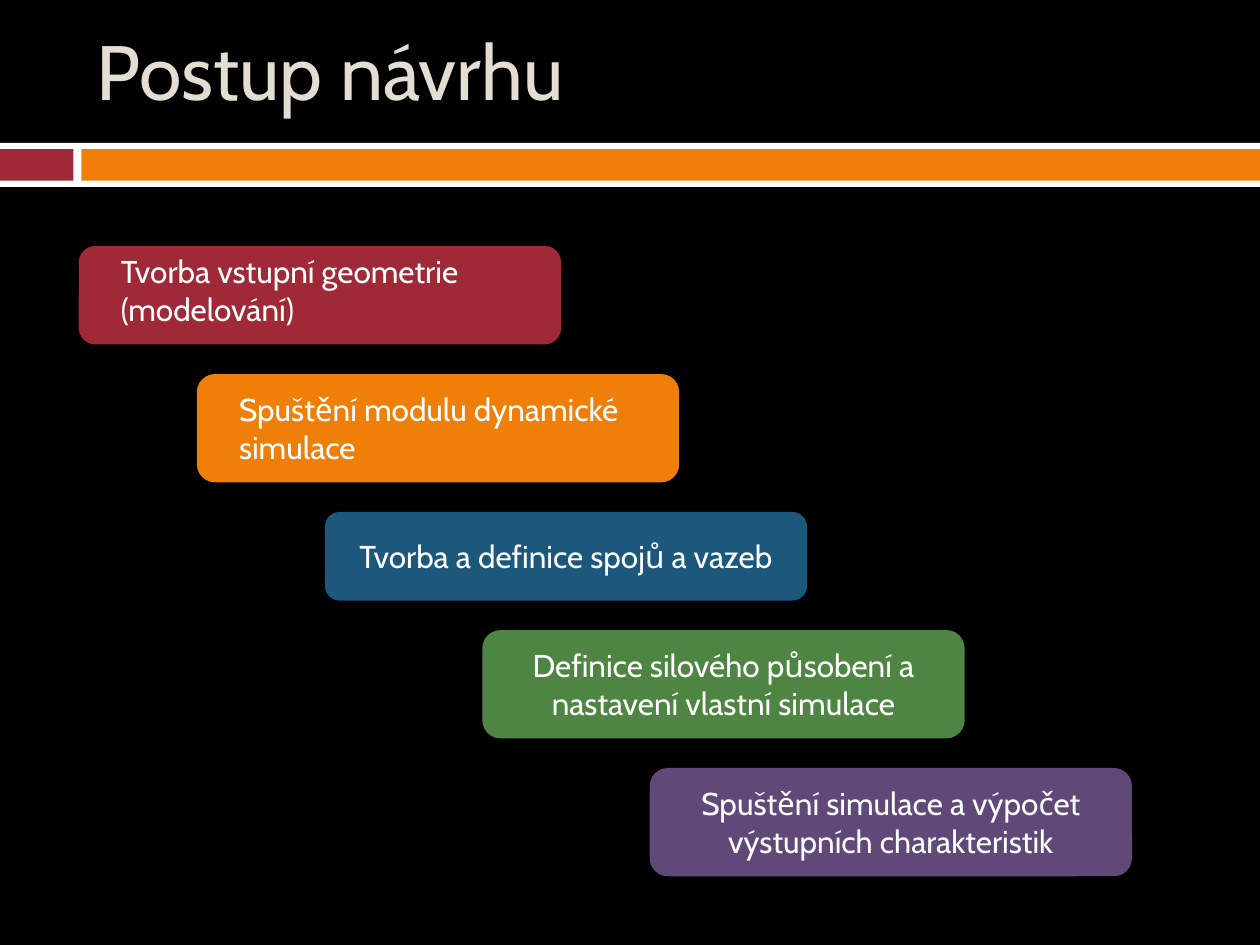
from pptx import Presentation
from pptx import util as u
from pptx.dml.color import RGBColor
from pptx.enum import shapes, text

WIDTH, HEIGHT = 720, 540
WHITE, RED, ORANGE = "FFFFFF", "9F2936", "F07F09"


def color(value):
    return RGBColor.from_string(value)


class SlideBuilder:
    """Holds the style and the current slide; lengths are in points."""

    font = "Cabin"
    size = 18

    def __init__(self, slide, background):
        self.slide = slide
        fill = slide.background.fill
        fill.solid()
        fill.fore_color.rgb = color(background)

    def box(self, kind, left, top, width, height, fill):
        shape = self.slide.shapes.add_shape(
            kind, u.Pt(left), u.Pt(top), u.Pt(width), u.Pt(height))
        shape.shadow.inherit = False
        shape.fill.solid()
        shape.fill.fore_color.rgb = color(fill)
        shape.line.fill.background()
        return shape

    def bar(self, left, top, width, height, fill):
        return self.box(shapes.MSO_SHAPE.RECTANGLE, left, top, width, height, fill)

    def card(self, left, top, width, height, fill):
        return self.box(shapes.MSO_SHAPE.ROUNDED_RECTANGLE,
                        left, top, width, height, fill)

    def add_words(self, shape, words, size=None, ink=WHITE,
                  align=text.PP_ALIGN.LEFT, anchor=text.MSO_ANCHOR.MIDDLE):
        frame = shape.text_frame
        frame.word_wrap = True
        frame.vertical_anchor = anchor
        paragraph = frame.paragraphs[0]
        paragraph.alignment = align
        run = paragraph.add_run()
        run.text = words
        run.font.name = self.font
        run.font.size = u.Pt(size or self.size)
        run.font.color.rgb = color(ink)

    def label(self, left, top, width, height, words, **style):
        shape = self.slide.shapes.add_textbox(
            u.Pt(left), u.Pt(top), u.Pt(width), u.Pt(height))
        self.add_words(shape, words, **style)


def main():
    presentation = Presentation()
    presentation.slide_width = u.Pt(WIDTH)
    presentation.slide_height = u.Pt(HEIGHT)
    slide = presentation.slides.add_slide(presentation.slide_layouts[6])
    builder = SlideBuilder(slide, "000000")

    # Band under the title
    builder.bar(0, 81.6, WIDTH, 25.2, WHITE)
    builder.bar(0, 85.2, 42, 18, RED)
    builder.bar(46.5, 85.2, WIDTH - 46.5, 18, ORANGE)

    # Title
    builder.label(48, 6.6, 642, 67, "Postup návrhu", size=44, ink="E3DED1")

    # Staircase of steps: left, height, fill, words, and for a left-aligned
    # step the vertical offset and width of its separate label
    steps = [
        (45, 56.25, RED, "Tvorba vstupní geometrie (modelování)", (0, 225.4)),
        (112.5, 61.9, ORANGE, "Spuštění modulu dynamické simulace", (5.6, 242)),
        (185.6, 50.6, "1B587C", "Tvorba a definice spojů a vazeb", None),
        (275.6, 61.9, "4E8542",
         "Definice silového působení a nastavení vlastní simulace", None),
        (371.25, 61.9, "604878",
         "Spuštění simulace a výpočet výstupních charakteristik", None),
    ]
    top, gap, card_width = 140.6, 16.9, 275.6
    for left, height, fill, words, label in steps:
        card = builder.card(left, top, card_width, height, fill)
        if label:
            offset, label_width = label
            builder.label(left + 17, top + offset, label_width, 50.9, words,
                          anchor=text.MSO_ANCHOR.TOP)
        else:
            builder.add_words(card, words, align=text.PP_ALIGN.CENTER)
        top += height + gap

    presentation.save("out.pptx")


if __name__ == "__main__":
    main()
